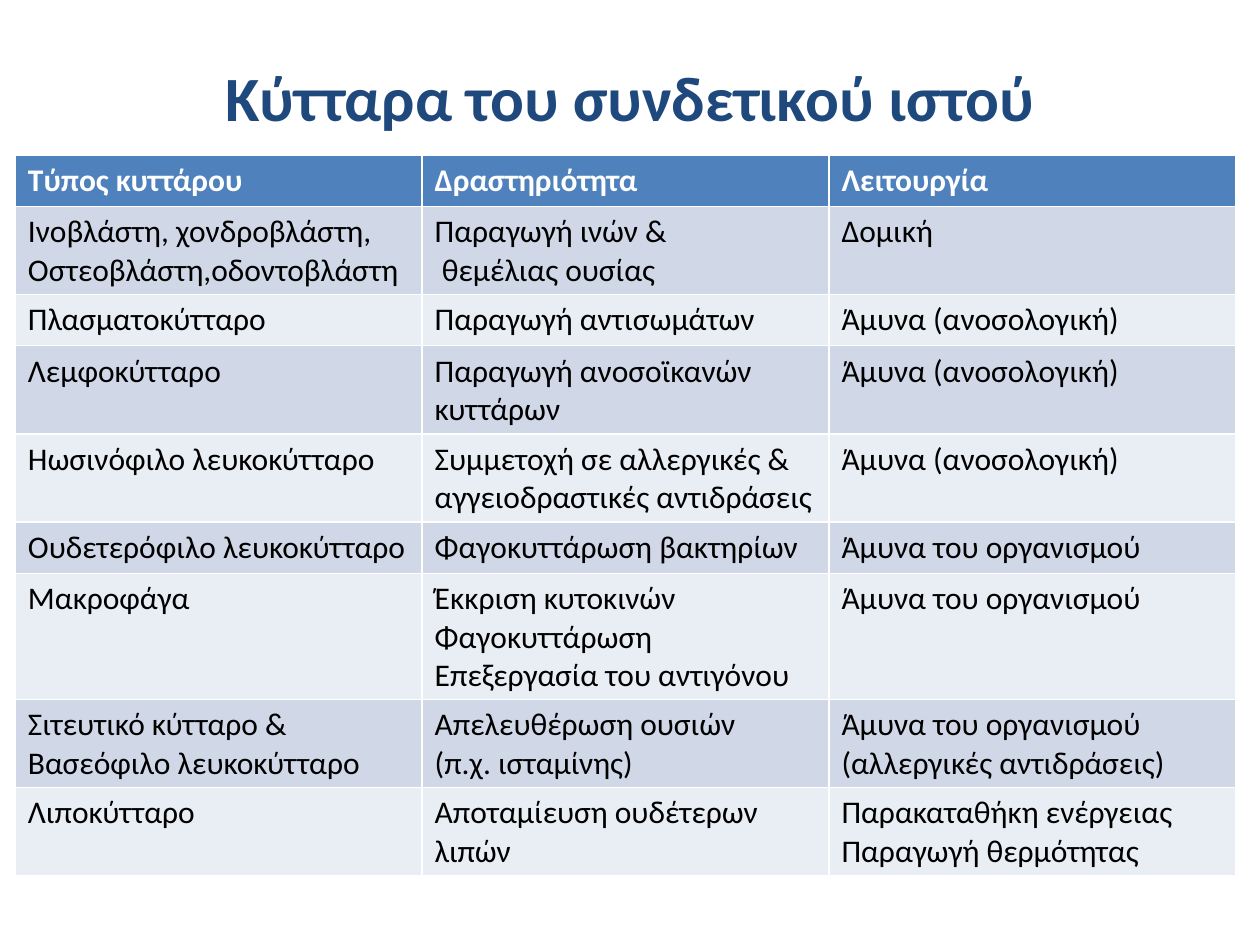
"""Build a slide with a table of connective tissue cells."""
import pptx
import pptx.dml.color
import pptx.enum.text
import pptx.util

Cm = pptx.util.Cm


def color(value):
    return pptx.dml.color.RGBColor.from_string(value)


def format_text(text_frame, size, value, bold):
    for paragraph in text_frame.paragraphs:
        for run in paragraph.runs:
            run.font.name = "Calibri"
            run.font.size = pptx.util.Pt(size)
            run.font.bold = bold
            run.font.color.rgb = color(value)


rows = [
    ("Τύπος κυττάρου", "Δραστηριότητα", "Λειτουργία"),
    ("Ινοβλάστη, χονδροβλάστη,\nΟστεοβλάστη,οδοντοβλάστη",
     "Παραγωγή ινών &\n θεμέλιας ουσίας", "Δομική"),
    ("Πλασματοκύτταρο", "Παραγωγή αντισωμάτων", "Άμυνα (ανοσολογική)"),
    ("Λεμφοκύτταρο", "Παραγωγή ανοσοϊκανών\nκυττάρων", "Άμυνα (ανοσολογική)"),
    ("Ηωσινόφιλο λευκοκύτταρο",
     "Συμμετοχή σε αλλεργικές &\nαγγειοδραστικές αντιδράσεις", "Άμυνα (ανοσολογική)"),
    ("Ουδετερόφιλο λευκοκύτταρο", "Φαγοκυττάρωση βακτηρίων", "Άμυνα του οργανισμού"),
    ("Μακροφάγα", "Έκκριση κυτοκινών\nΦαγοκυττάρωση\nΕπεξεργασία του αντιγόνου",
     "Άμυνα του οργανισμού"),
    ("Σιτευτικό κύτταρο &\nΒασεόφιλο λευκοκύτταρο",
     "Απελευθέρωση ουσιών\n(π.χ. ισταμίνης)",
     "Άμυνα του οργανισμού\n(αλλεργικές αντιδράσεις)"),
    ("Λιποκύτταρο", "Αποταμίευση ουδέτερων λιπών",
     "Παρακαταθήκη ενέργειας\nΠαραγωγή θερμότητας"),
]

presentation = pptx.Presentation()
presentation.slide_width = Cm(25.4)
presentation.slide_height = Cm(19.05)
slide = presentation.slides.add_slide(presentation.slide_layouts[6])

title = slide.shapes.add_textbox(Cm(1.27), Cm(0.76), Cm(22.86), Cm(2.36))
title.text_frame.word_wrap = True
title.text_frame.vertical_anchor = pptx.enum.text.MSO_ANCHOR.MIDDLE
title.text_frame.text = "Κύτταρα του συνδετικού ιστού"
title.text_frame.paragraphs[0].alignment = pptx.enum.text.PP_ALIGN.CENTER
format_text(title.text_frame, 36, "1F497D", True)

table = slide.shapes.add_table(
    len(rows), 3, Cm(0.31), Cm(3.13), Cm(24.6), Cm(1.03) * len(rows)
).table
for row_index, texts in enumerate(rows):
    header = row_index == 0
    band = "D0D8E8" if row_index % 2 else "E9EDF4"
    for column_index, text in enumerate(texts):
        cell = table.cell(row_index, column_index)
        cell.fill.solid()
        cell.fill.fore_color.rgb = color("4F81BD" if header else band)
        cell.text_frame.text = text
        format_text(cell.text_frame, 18, "FFFFFF" if header else "000000", header)

presentation.save("out.pptx")
